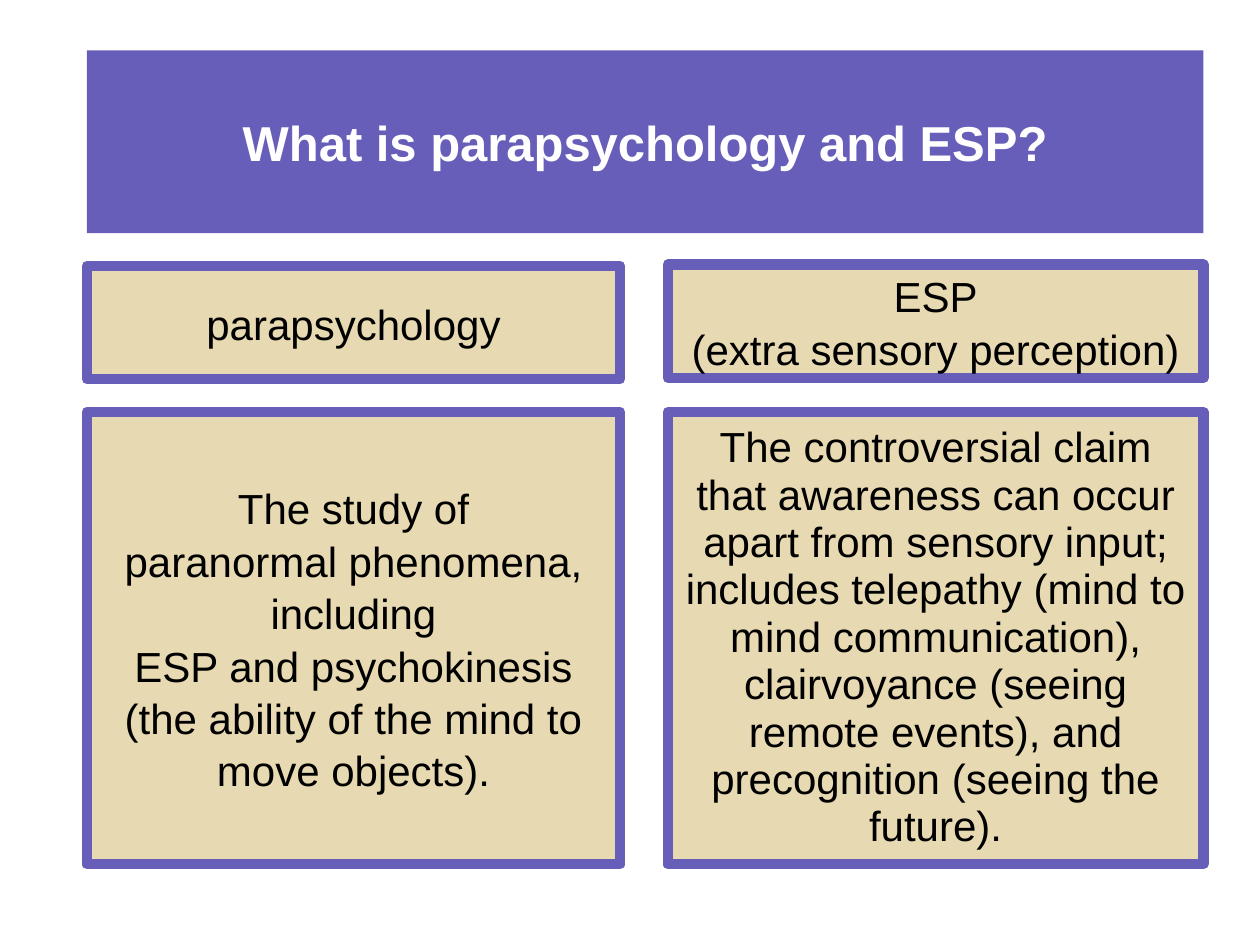
from dataclasses import dataclass

from pptx import Presentation
from pptx.dml.color import RGBColor
from pptx.enum.shapes import MSO_SHAPE
from pptx.enum.text import MSO_ANCHOR, MSO_AUTO_SIZE, PP_ALIGN
from pptx.oxml.xmlchemy import OxmlElement
from pptx.util import Pt

PURPLE, SAND, BLACK, WHITE = "665EB8", "E7D9B1", "000000", "FFFFFF"
LEFT_COLUMN = (49.7, 304.6)
RIGHT_COLUMN = (381.6, 306)
BODY_TOP, BODY_HEIGHT = 235.4, 258.5
HEADING_HEIGHT = 64.8


@dataclass
class Panel:
    column: tuple[float, float]
    top: float
    height: float
    paragraphs: list[str]
    line_spacing: float = 1.04


PANELS = [
    Panel(LEFT_COLUMN, 151.9, HEADING_HEIGHT, ["parapsychology"]),
    Panel(LEFT_COLUMN, BODY_TOP, BODY_HEIGHT, [
        "The study of",
        "paranormal phenomena, including",
        "ESP and psychokinesis (the ability of the mind to move objects).",
    ]),
    Panel(RIGHT_COLUMN, 151.2, HEADING_HEIGHT,
          ["ESP", "(extra sensory perception)"]),
    Panel(RIGHT_COLUMN, BODY_TOP, BODY_HEIGHT, [
        "The controversial claim that awareness can occur apart from sensory "
        "input; includes telepathy (mind to mind communication),",
        "clairvoyance (seeing remote events), and precognition (seeing the "
        "future).",
    ], 0.94),
]


def color(value: str) -> RGBColor:
    return RGBColor.from_string(value)


def set_fill(shape, value: str) -> None:
    shape.fill.solid()
    shape.fill.fore_color.rgb = color(value)


def write_text(shape, paragraphs: list[str], text_color: str,
               font_format: dict, line_spacing: float = 1.0) -> None:
    frame = shape.text_frame
    frame.text = "\n".join(paragraphs)
    frame.word_wrap = True
    frame.auto_size = MSO_AUTO_SIZE.NONE
    frame.vertical_anchor = MSO_ANCHOR.MIDDLE
    for paragraph in frame.paragraphs:
        paragraph.alignment = PP_ALIGN.CENTER
        paragraph.line_spacing = line_spacing
        font = paragraph.runs[0].font
        font.color.rgb = color(text_color)
        for name, value in font_format.items():
            setattr(font, name, value)


def add_panel(slide, panel: Panel) -> None:
    left, width = panel.column
    shape = slide.shapes.add_shape(MSO_SHAPE.RECTANGLE, Pt(left), Pt(panel.top),
                                   Pt(width), Pt(panel.height))
    shape.shadow.inherit = False
    set_fill(shape, SAND)
    shape.line.color.rgb = color(PURPLE)
    shape.line.width = Pt(6)
    # Rounded joins soften the corners of the thick border
    shape.line._get_or_add_ln().append(OxmlElement("a:round"))
    write_text(shape, panel.paragraphs, BLACK,
               {"name": "Arial", "size": Pt(24)}, panel.line_spacing)


def main() -> None:
    presentation = Presentation()
    presentation.slide_width, presentation.slide_height = Pt(720), Pt(540)
    slide = presentation.slides.add_slide(presentation.slide_layouts[5])

    # Title banner
    title = slide.shapes.title
    banner = {"left": 49.7, "top": 28.8, "width": 637.9, "height": 104.4}
    for name, value in banner.items():
        setattr(title, name, Pt(value))
    set_fill(title, PURPLE)
    write_text(title, ["What is parapsychology and ESP?"], WHITE,
               {"name": "Arial", "size": Pt(28), "bold": True})

    # Headings and definitions
    for panel in PANELS:
        add_panel(slide, panel)

    presentation.save("out.pptx")


if __name__ == "__main__":
    main()
